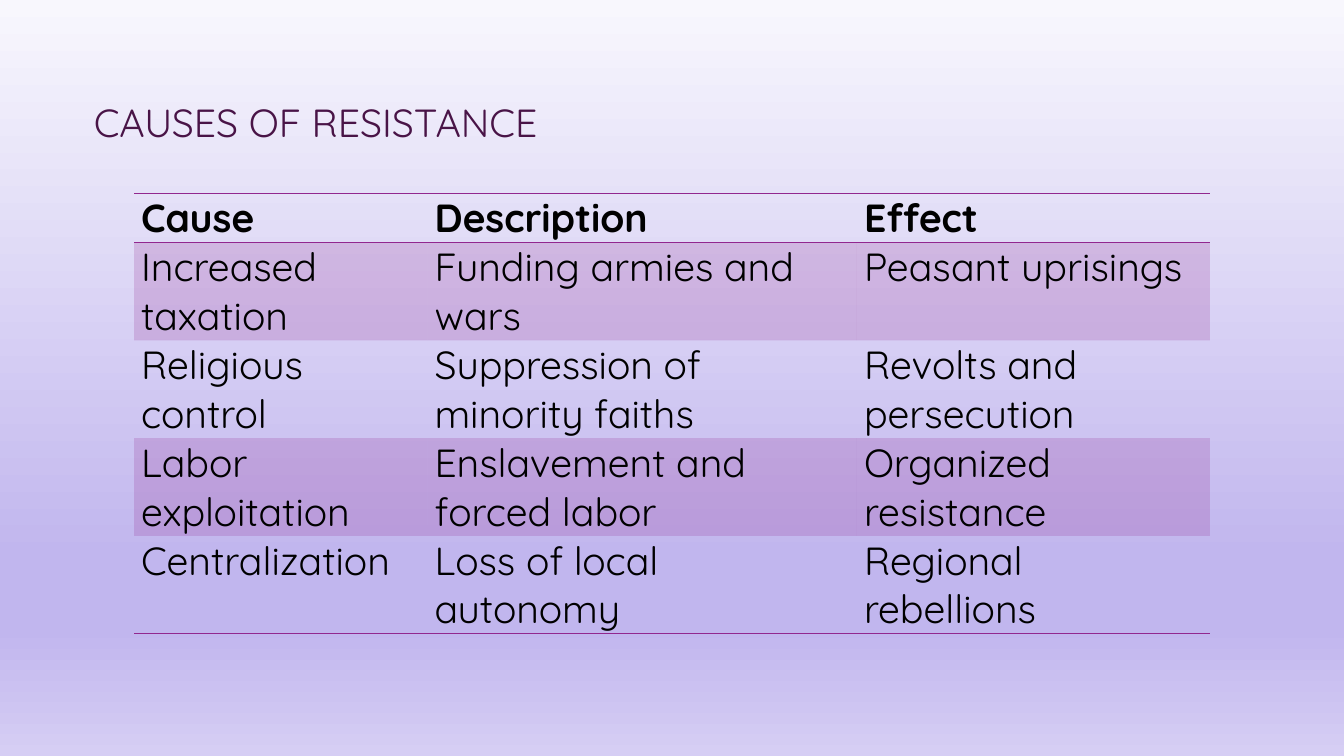
"""Build the slide on the causes of resistance."""
import pptx
import pptx.dml.color
import pptx.enum.shapes
import pptx.enum.text
import pptx.oxml
import pptx.oxml.ns
import pptx.util
from lxml import etree

Inches = pptx.util.Inches
qn = pptx.oxml.ns.qn

TITLE = "CAUSES OF RESISTANCE"
ROWS = [
    ("Cause", "Description", "Effect"),
    ("Increased taxation", "Funding armies and wars", "Peasant uprisings"),
    ("Religious control", "Suppression of minority faiths", "Revolts and persecution"),
    ("Labor exploitation", "Enslavement and forced labor", "Organized resistance"),
    ("Centralization", "Loss of local autonomy", "Regional rebellions"),
]
COL_WIDTHS = (2.91, 4.26, 3.5)
HEADER_HEIGHT, ROW_HEIGHT = 0.48, 0.97
TABLE_LEFT, TABLE_TOP = 1.33, 1.92
SLIDE_WIDTH, SLIDE_HEIGHT = 13.33, 7.5
THEME = {
    "font": "Quicksand",
    "size": 28,
    "title": "491447",
    "text": "000000",
    "accent": "92278F",
    "band_alpha": 20,
    "rule": 1,
    "backdrop": ((0, "F8F7FD"), (74, "C1B6EE"), (83, "C1B6EE"), (100, "D6CEF4")),
    "table_style": "{2D5ABB26-0587-4C30-8999-92F81FD0307C}",
}


def rgb(color):
    """Return a colour object for a hex string."""
    return pptx.dml.color.RGBColor.from_string(color)


def write(tf, text, color=THEME["text"], bold=False, spacing=None):
    """Put one formatted paragraph in a text frame."""
    tf.word_wrap = True
    p = tf.paragraphs[0]
    p.alignment = pptx.enum.text.PP_ALIGN.LEFT
    p.line_spacing = spacing
    r = p.add_run()
    r.text = text
    r.font.name = THEME["font"]
    r.font.size = pptx.util.Pt(THEME["size"])
    r.font.bold = bold
    r.font.color.rgb = rgb(color)


def add_backdrop(s):
    """Cover the slide with a vertical gradient behind everything else."""
    sp = s.shapes.add_shape(pptx.enum.shapes.MSO_SHAPE.RECTANGLE, 0, 0,
                            Inches(SLIDE_WIDTH), Inches(SLIDE_HEIGHT))
    sp.shadow.inherit = False
    sp.line.fill.background()
    sp.fill.gradient()
    sp.fill.gradient_angle = 270
    stops = sp._element.spPr.find(".//" + qn("a:gsLst"))
    for stop in list(stops):
        stops.remove(stop)
    for position, color in THEME["backdrop"]:
        stop = etree.SubElement(stops, qn("a:gs"), pos=str(position * 1000))
        etree.SubElement(stop, qn("a:srgbClr"), val=color)
    s.shapes._spTree.insert(2, sp._element)


def add_rule(cell, side):
    """Draw one border of a table cell."""
    width = str(pptx.util.Pt(THEME["rule"]))
    line = etree.SubElement(cell._tc.get_or_add_tcPr(), qn("a:" + side), w=width)
    fill = etree.SubElement(line, qn("a:solidFill"))
    etree.SubElement(fill, qn("a:srgbClr"), val=THEME["accent"])


def fill_cell(cell, banded):
    """Give a cell a translucent band or no fill."""
    if not banded:
        cell.fill.background()
        return
    cell.fill.solid()
    cell.fill.fore_color.rgb = rgb(THEME["accent"])
    color = cell._tc.tcPr.find(".//" + qn("a:srgbClr"))
    etree.SubElement(color, qn("a:alpha"), val=str(THEME["band_alpha"] * 1000))


def add_causes(s):
    """Add the table of causes."""
    heights = [HEADER_HEIGHT] + [ROW_HEIGHT] * (len(ROWS) - 1)
    table = s.shapes.add_table(len(ROWS), len(COL_WIDTHS), Inches(TABLE_LEFT),
                               Inches(TABLE_TOP), Inches(sum(COL_WIDTHS)),
                               Inches(sum(heights))).table
    table.horz_banding = False
    table._tbl.tblPr.find(qn("a:tableStyleId")).text = THEME["table_style"]
    for column, width in zip(table.columns, COL_WIDTHS):
        column.width = Inches(width)
    for i, (texts, height) in enumerate(zip(ROWS, heights)):
        table.rows[i].height = Inches(height)
        for cell, text in zip(table.rows[i].cells, texts):
            cell.margin_left = cell.margin_right = Inches(0.07)
            cell.margin_top = cell.margin_bottom = 0
            write(cell.text_frame, text, bold=i == 0)
            if i == 0:
                add_rule(cell, "lnT")
            if i in (0, len(ROWS) - 1):
                add_rule(cell, "lnB")
            fill_cell(cell, banded=i % 2 == 1)


def main():
    """Create and save the presentation."""
    prs = pptx.Presentation()
    prs.slide_width, prs.slide_height = Inches(SLIDE_WIDTH), Inches(SLIDE_HEIGHT)
    s = prs.slides.add_slide(prs.slide_layouts[5])
    add_backdrop(s)
    title = s.shapes.title
    title.left, title.top = Inches(0.83), Inches(0.83)
    title.width, title.height = Inches(11.67), Inches(0.67)
    tf = title.text_frame
    tf.auto_size = pptx.enum.text.MSO_AUTO_SIZE.NONE
    tf.vertical_anchor = pptx.enum.text.MSO_ANCHOR.BOTTOM
    write(tf, TITLE, color=THEME["title"], spacing=0.9)
    add_causes(s)
    prs.save("out.pptx")


if __name__ == "__main__":
    main()
